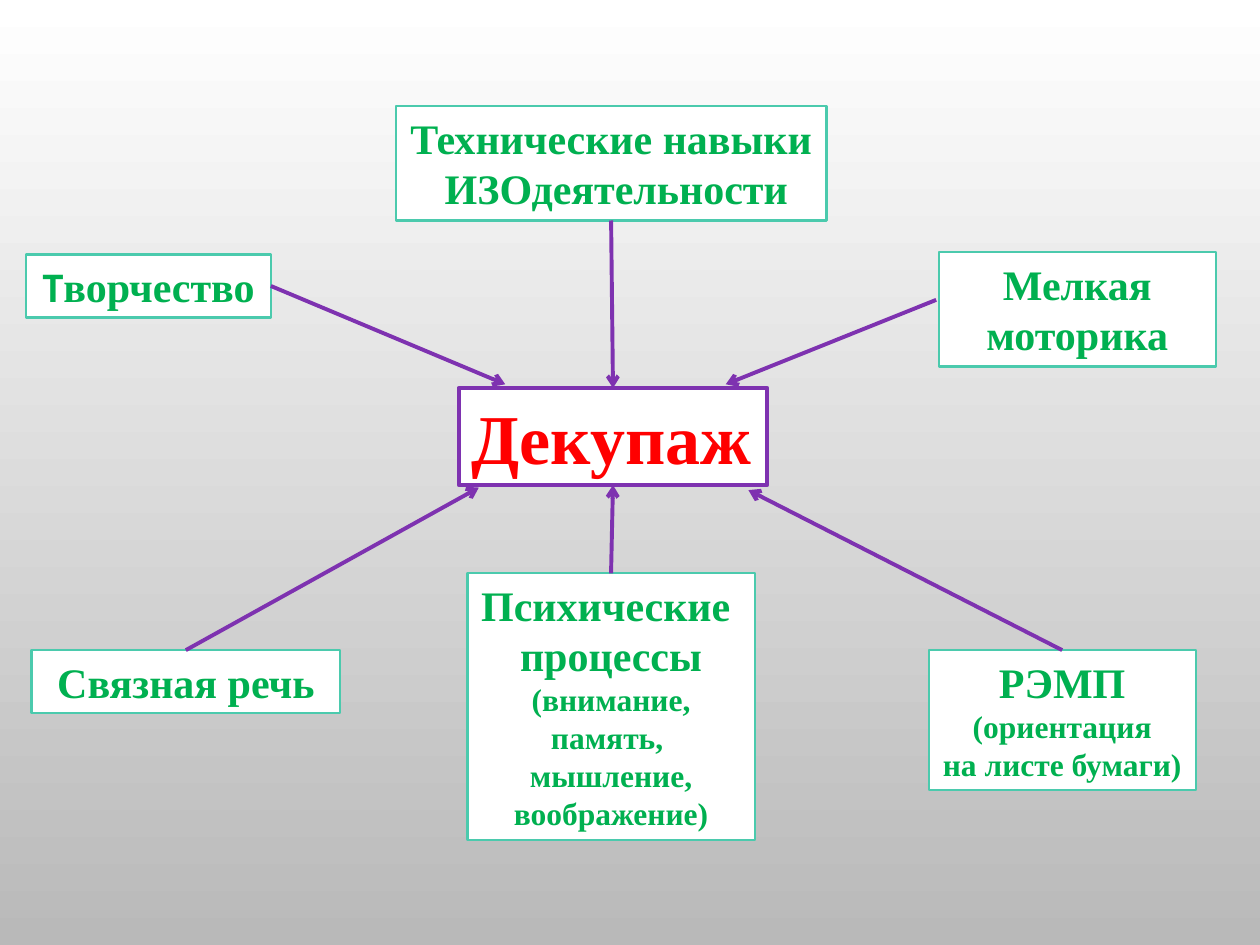
from lxml import etree
from pptx import Presentation
from pptx.dml.color import RGBColor
from pptx.enum.shapes import MSO_CONNECTOR
from pptx.enum.text import MSO_AUTO_SIZE, PP_ALIGN
from pptx.oxml.ns import qn
from pptx.util import Inches, Pt

WHITE = RGBColor(0xFF, 0xFF, 0xFF)
GREY = RGBColor(0xB9, 0xB9, 0xB9)
PURPLE = RGBColor(0x7E, 0x32, 0xB0)
TEAL = RGBColor(0x4B, 0xCA, 0xAD)
GREEN = RGBColor(0x00, 0xB0, 0x50)
RED = RGBColor(0xFF, 0x00, 0x00)
STRAIGHT = MSO_CONNECTOR.STRAIGHT
FIT = MSO_AUTO_SIZE.SHAPE_TO_FIT_TEXT
CENTER, LEFT = PP_ALIGN.CENTER, PP_ALIGN.LEFT
SERIF, SANS = "Times New Roman", "Calibri"
TOP, RIGHT, BOTTOM = 0, 3, 2

HUB = ("Декупаж", (3.64, 3.08, 2.45, 0.77))
TOPICS = {
    "speech": ((0.25, 5.16, 2.45, 0.5), True, [("Связная речь", 24)]),
    "motor": ((7.45, 2, 2.2, 0.91), True, [("Мелкая", 24), ("моторика", 24)]),
    "mind": ((3.71, 4.55, 2.28, 2.12), False, [
        ("Психические ", 24), ("процессы", 24), ("(внимание,", 18),
        ("память, ", 18), ("мышление,", 18), ("воображение)", 18)]),
    "maths": ((7.37, 5.16, 2.12, 1.11), False, [
        ("РЭМП", 24), (" (ориентация ", 18), ("на листе бумаги)", 18)]),
    "skills": ((3.14, 0.84, 3.42, 0.91), False, [
        ("Технические навыки", 24), (" ИЗОдеятельности", 24)]),
    "creativity": ((0.21, 2.02, 1.94, 0.5), False, [("Творчество", 24)]),
}
ARROWS = [
    ("creativity", RIGHT, (2.15, 2.28), None, (4.01, 3.05)),
    ("speech", TOP, (1.48, 5.16), None, (3.8, 3.87)),
    ("skills", BOTTOM, (4.85, 1.75), TOP, (4.86, 3.08)),
    ("maths", TOP, (8.43, 5.16), None, (5.94, 3.89)),
    ("motor", None, (7.43, 2.38), None, (5.76, 3.05)),
    ("mind", TOP, (4.85, 4.54), BOTTOM, (4.85, 3.87)),
]


def style(r, size, color, font=SERIF):
    r.font.name, r.font.size, r.font.bold = font, Pt(size), True
    r.font.color.rgb = color


def add_box(s, place, lines, color, border, width, wrap=False, align=CENTER):
    sp = s.shapes.add_textbox(*map(Inches, place))
    sp.fill.solid()
    sp.fill.fore_color.rgb = WHITE
    sp.line.color.rgb = border
    sp.line.width = Pt(width)
    tf = sp.text_frame
    tf.word_wrap = wrap
    tf.auto_size = FIT
    tf.text = "\n".join(text for text, size in lines)
    for p, (text, size) in zip(tf.paragraphs, lines):
        p.alignment = align
        style(p.runs[0], size, color)
    return sp


def add_arrow(s, start, end):
    line = s.shapes.add_connector(STRAIGHT, *map(Inches, start + end))
    line.line.color.rgb = PURPLE
    line.line.width = Pt(2.25)
    etree.SubElement(line.line._get_or_add_ln(), qn("a:tailEnd"), type="arrow")
    etree.SubElement(line._element.spPr, qn("a:effectLst"))
    return line


prs = Presentation()
prs.slide_width, prs.slide_height = Inches(10), Inches(7.5)
s = prs.slides.add_slide(prs.slide_layouts[6])

fill = s.background.fill
fill.gradient()
fill.gradient_angle = 270
for stop, color, position in zip(fill.gradient_stops, (WHITE, GREY), (0, 1)):
    stop.color.rgb = color
    stop.position = position

name, place = HUB
hub = add_box(s, place, [(name, 40)], RED, PURPLE, 2.25, align=LEFT)
boxes = {key: add_box(s, place, lines, GREEN, TEAL, 1.25, wrap)
         for key, (place, wrap, lines) in TOPICS.items()}

p = boxes["creativity"].text_frame.paragraphs[0]
initial, rest = p.runs[0], p.add_run()
initial.text, rest.text = initial.text[:1], initial.text[1:]
style(initial, 24, GREEN, SANS)
style(rest, 24, GREEN)

for key, side, start, hub_side, end in ARROWS:
    arrow = add_arrow(s, start, end)
    if side is not None:
        arrow.begin_connect(boxes[key], side)
    if hub_side is not None:
        arrow.end_connect(hub, hub_side)

prs.save("out.pptx")
